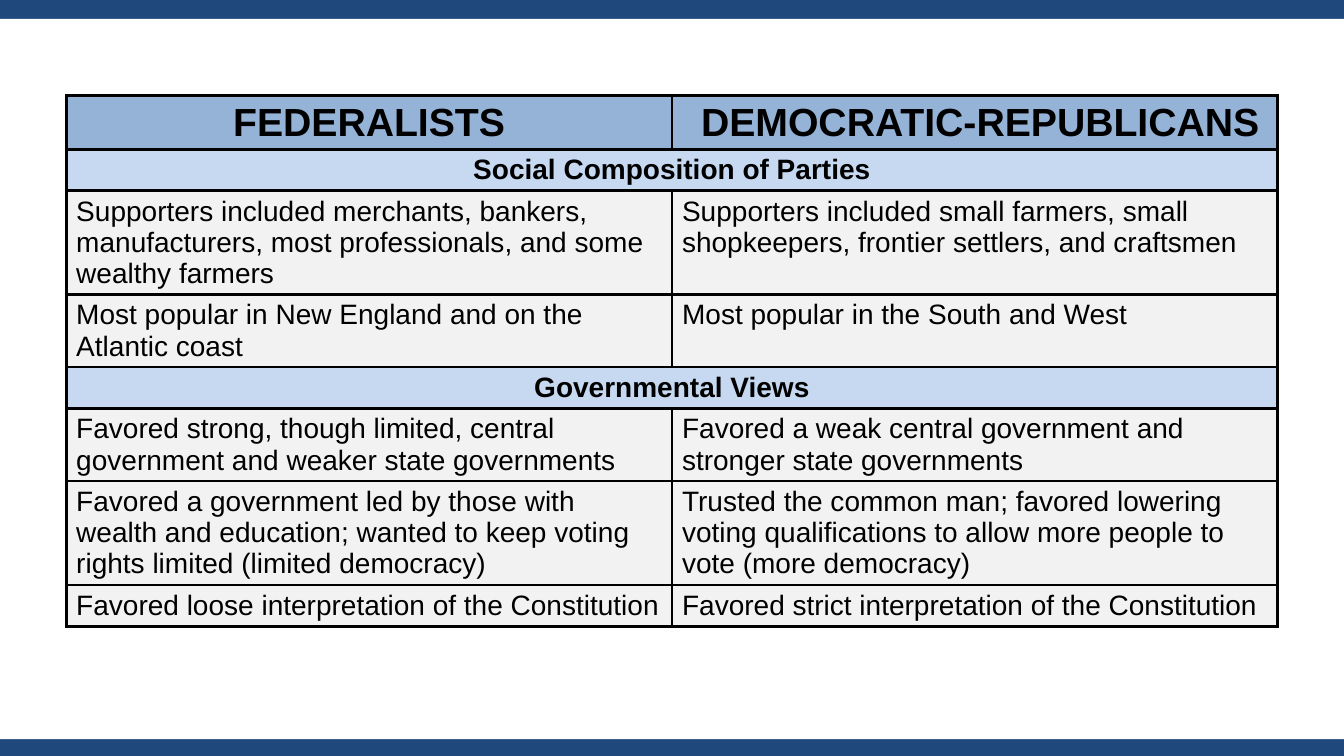
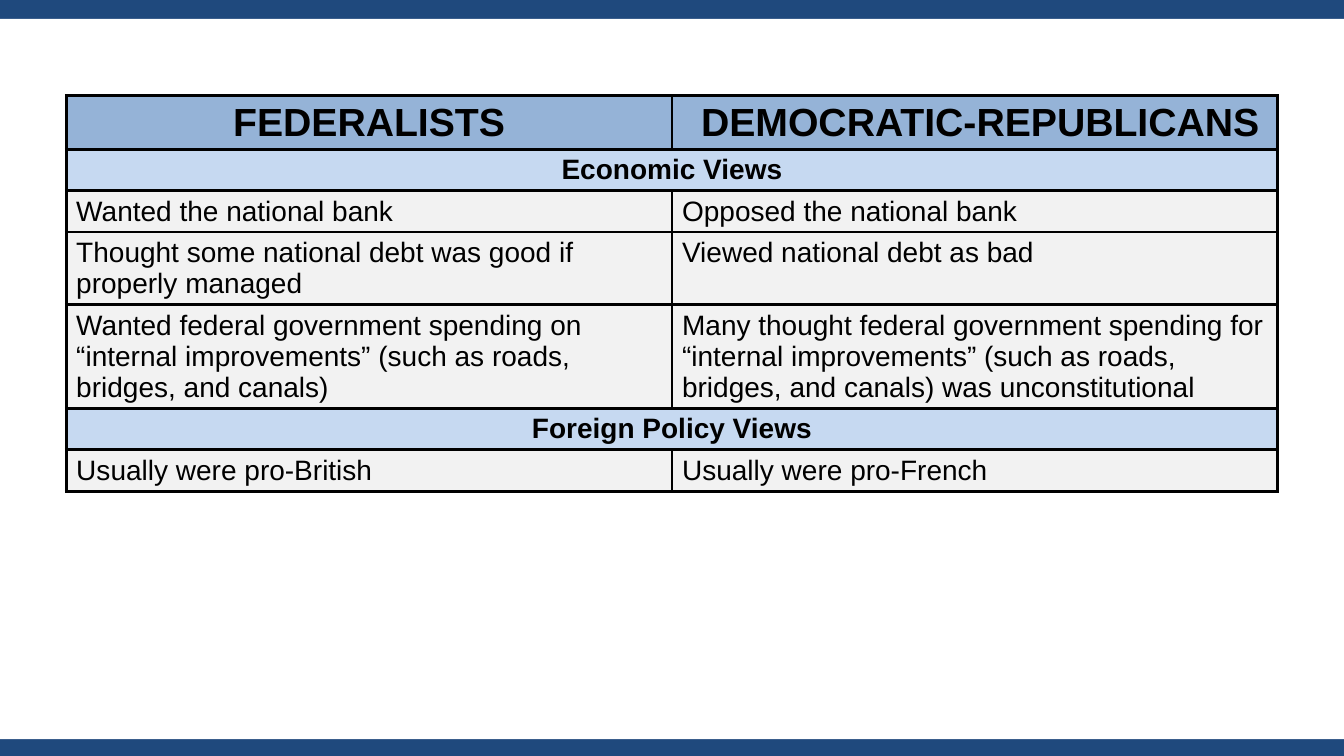
from dataclasses import dataclass

from lxml.etree import SubElement
from pptx import Presentation
from pptx.dml.color import RGBColor as RGB
from pptx.enum.shapes import MSO_SHAPE as SHAPE
from pptx.enum.text import PP_ALIGN as ALIGN
from pptx.oxml.ns import qn
from pptx.util import Emu, Pt

PX = 9525
SLIDE_W, SLIDE_H = 1280, 720
BAND_TOP, BAND_BOTTOM = 18, 16
TABLE_LEFT, TABLE_TOP, COL_W, ROW_H = 63, 91, 577, 39
HEADER_INDENT = 10


def px(n):
    return Emu(n * PX)


@dataclass(frozen=True)
class Theme:
    font: str = "Arial"
    ink: str = "000000"
    band: str = "1F497D"
    panel: str = "FFFFFF"
    header: str = "95B3D7"
    section: str = "C6D9F1"
    body: str = "F2F2F2"
    header_size: int = 28
    text_size: int = 20
    border: float = 2.25


class Deck:
    def __init__(self, theme):
        self.theme = theme
        self.prs = Presentation()
        self.prs.slide_width, self.prs.slide_height = px(SLIDE_W), px(SLIDE_H)
        self.fill(self.prs.slide_master.background, theme.band)
        self.s = None

    def fill(self, target, color):
        target.fill.solid()
        target.fill.fore_color.rgb = RGB.from_string(color)

    def add_slide(self):
        """Start a slide whose white panel leaves a band at top and bottom."""
        self.s = self.prs.slides.add_slide(self.prs.slide_layouts[6])
        height = SLIDE_H - BAND_TOP - BAND_BOTTOM
        sp = self.s.shapes.add_shape(SHAPE.RECTANGLE, 0, px(BAND_TOP),
                                     px(SLIDE_W), px(height))
        sp.shadow.inherit = False
        sp.line.fill.background()
        self.fill(sp, self.theme.panel)

    def add_borders(self, cell):
        tc_pr = cell._tc.get_or_add_tcPr()
        for side in ("lnL", "lnR", "lnT", "lnB"):
            ln = SubElement(tc_pr, qn(f"a:{side}"), w=str(Pt(self.theme.border)))
            solid = SubElement(ln, qn("a:solidFill"))
            SubElement(solid, qn("a:srgbClr"), val=self.theme.ink)

    def add_text(self, cell, text, size, bold, align):
        p = cell.text_frame.paragraphs[0]
        p.alignment = align
        r = p.add_run()
        r.text = text
        for name, value in dict(name=self.theme.font, size=Pt(size), bold=bold).items():
            setattr(r.font, name, value)
        r.font.color.rgb = RGB.from_string(self.theme.ink)

    def add_table(self, rows):
        """Each row holds two cells, or one that spans both columns."""
        t = self.theme
        styles = {
            "header": (t.header, t.header_size, True, ALIGN.CENTER),
            "section": (t.section, t.text_size, True, ALIGN.CENTER),
            "body": (t.body, t.text_size, False, ALIGN.LEFT),
        }
        table = self.s.shapes.add_table(
            len(rows), 2, px(TABLE_LEFT), px(TABLE_TOP),
            px(2 * COL_W), px(len(rows) * ROW_H)).table
        table.first_row = table.horz_banding = False
        for i, texts in enumerate(rows):
            kind = "header" if i == 0 else "section" if len(texts) == 1 else "body"
            color, *text_style = styles[kind]
            cells = [table.cell(i, j) for j in range(2)]
            for cell in cells:
                self.add_borders(cell)
                self.fill(cell, color)
            if kind == "section":
                cells[0].merge(cells[1])
            for cell, text in zip(cells, texts):
                self.add_text(cell, text, *text_style)
        right_header = table.cell(0, 1)
        right_header.margin_left += px(HEADER_INDENT)


HEADER = ("FEDERALISTS", "DEMOCRATIC-REPUBLICANS")

SOCIETY_AND_GOVERNMENT = [
    ("Social Composition of Parties",),
    ("Supporters included merchants, bankers, manufacturers, most professionals, "
     "and some wealthy farmers",
     "Supporters included small farmers, small shopkeepers, frontier settlers, "
     "and craftsmen"),
    ("Most popular in New England and on the Atlantic coast",
     "Most popular in the South and West"),
    ("Governmental Views",),
    ("Favored strong, though limited, central government and weaker state governments",
     "Favored a weak central government and stronger state governments"),
    ("Favored a government led by those with wealth and education; wanted to keep "
     "voting rights limited (limited democracy)",
     "Trusted the common man; favored lowering voting qualifications to allow more "
     "people to vote (more democracy)"),
    ("Favored loose interpretation of the Constitution",
     "Favored strict interpretation of the Constitution"),
]

ECONOMY_AND_FOREIGN_POLICY = [
    ("Economic Views",),
    ("Wanted the national bank", "Opposed the national bank"),
    ("Thought some national debt was good if properly managed",
     "Viewed national debt as bad"),
    ("Wanted federal government spending on “internal improvements” (such as roads, "
     "bridges, and canals)",
     "Many thought federal government spending for “internal improvements” (such as "
     "roads, bridges, and canals) was unconstitutional"),
    ("Foreign Policy Views",),
    ("Usually were pro-British", "Usually were pro-French"),
]


def main():
    deck = Deck(Theme())
    for rows in (SOCIETY_AND_GOVERNMENT, ECONOMY_AND_FOREIGN_POLICY):
        deck.add_slide()
        deck.add_table([HEADER, *rows])
    deck.prs.save("out.pptx")


if __name__ == "__main__":
    main()
